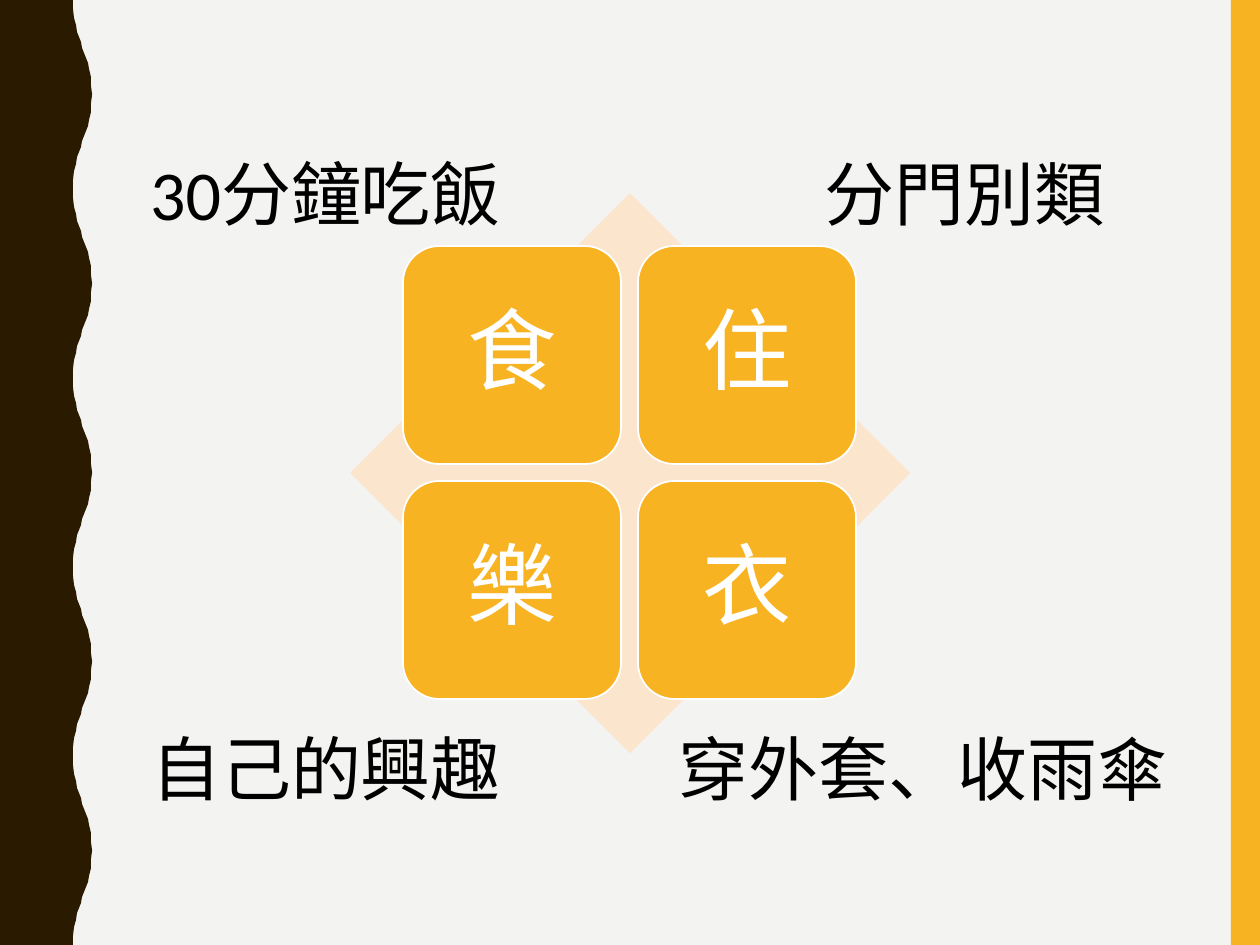
"""Build a slide with four tiles on a diamond and a caption at each corner."""
from dataclasses import dataclass

from pptx import Presentation
from pptx import util as u
from pptx.dml.color import RGBColor
from pptx.enum import shapes, text

SCALE = 914400 / 126
WIDTH, HEIGHT = 1260, 945
FONT = "Calibri"
GOLD, BROWN, PEACH = "F8B323", "2A1A00", "FCE5CD"
PAPER, WHITE, BLACK = "F3F3F2", "FFFFFF", "000000"
TILE_SIZE, TILE_PITCH = 218, 235
TILE_LEFT, TILE_TOP = 403, 246
WAVE_PERIOD = 189
HALF_WAVE = [
    (73, 0), (73, 9), (74, 18), (76, 25), (77, 32), (79, 37), (81, 42), (82, 48),
    (84, 53), (86, 58), (88, 63), (89, 69), (91, 77), (91, 86), (92, 94),
]


@dataclass(frozen=True)
class Tile:
    label: str
    column: int
    row: int


@dataclass(frozen=True)
class Caption:
    label: str
    left: int
    top: int
    width: int


TILES = [Tile("食", 0, 0), Tile("住", 1, 0), Tile("樂", 0, 1), Tile("衣", 1, 1)]
CAPTIONS = [
    Caption("30分鐘吃飯", 132, 144, 387),
    Caption("分門別類", 810, 144, 309),
    Caption("自己的興趣", 136, 719, 380),
    Caption("穿外套、收雨傘", 663, 719, 520),
]


def px(length: int) -> int:
    """Turn pixels into EMU."""
    return round(length * SCALE)


def color(value: str) -> RGBColor:
    """Turn a hex string into a colour."""
    return RGBColor.from_string(value)


def paint(shape, fill: str) -> None:
    """Give a shape a flat fill with no line or shadow."""
    shape.shadow.inherit = False
    shape.fill.solid()
    shape.fill.fore_color.rgb = color(fill)
    shape.line.fill.background()


def add_block(slide, kind, left: int, top: int, width: int, height: int, fill: str):
    """Add a filled preset shape."""
    shape = slide.shapes.add_shape(kind, px(left), px(top), px(width), px(height))
    paint(shape, fill)
    return shape


def write(shape, label: str, size: int, font_color: str):
    """Write one centred paragraph into a shape."""
    shape.text_frame.word_wrap = True
    paragraph = shape.text_frame.paragraphs[0]
    paragraph.text = label
    paragraph.alignment = text.PP_ALIGN.CENTER
    paragraph.font.name = FONT
    paragraph.font.size = u.Pt(size)
    paragraph.font.color.rgb = color(font_color)
    return paragraph


def add_wave(slide) -> None:
    """Add the dark band with a wavy right edge."""
    mirrored = [(x, WAVE_PERIOD - y) for x, y in reversed(HALF_WAVE)]
    edge = [
        (x, period * WAVE_PERIOD + y)
        for period in range(HEIGHT // WAVE_PERIOD)
        for x, y in HALF_WAVE + mirrored
    ]
    builder = slide.shapes.build_freeform(0, 0, SCALE)
    builder.add_line_segments(edge + [(0, HEIGHT)], close=True)
    paint(builder.convert_to_shape(), BROWN)


def add_tile(slide, tile: Tile) -> None:
    """Add one rounded tile with its character."""
    shape = add_block(
        slide, shapes.MSO_SHAPE.ROUNDED_RECTANGLE,
        TILE_LEFT + tile.column * TILE_PITCH, TILE_TOP + tile.row * TILE_PITCH,
        TILE_SIZE, TILE_SIZE, GOLD,
    )
    shape.line.color.rgb = color(WHITE)
    shape.line.width = u.Pt(1)
    shape.text_frame.vertical_anchor = text.MSO_ANCHOR.MIDDLE
    paragraph = write(shape, tile.label, 51, WHITE)
    paragraph.line_spacing = 0.9
    paragraph.space_after = u.Pt(18)


def add_caption(slide, caption: Caption) -> None:
    """Add one corner caption."""
    box = slide.shapes.add_textbox(
        px(caption.left), px(caption.top), px(caption.width), px(97)
    )
    write(box, caption.label, 40, BLACK)


def main() -> None:
    """Build and save the presentation."""
    presentation = Presentation()
    presentation.slide_width, presentation.slide_height = px(WIDTH), px(HEIGHT)
    slide = presentation.slides.add_slide(presentation.slide_layouts[6])
    slide.background.fill.solid()
    slide.background.fill.fore_color.rgb = color(PAPER)
    add_wave(slide)
    add_block(slide, shapes.MSO_SHAPE.RECTANGLE, 1231, 0, 29, HEIGHT, GOLD)
    add_block(slide, shapes.MSO_SHAPE.DIAMOND, 350, 193, 560, 560, PEACH)
    for tile in TILES:
        add_tile(slide, tile)
    for caption in CAPTIONS:
        add_caption(slide, caption)
    presentation.save("out.pptx")


if __name__ == "__main__":
    main()
